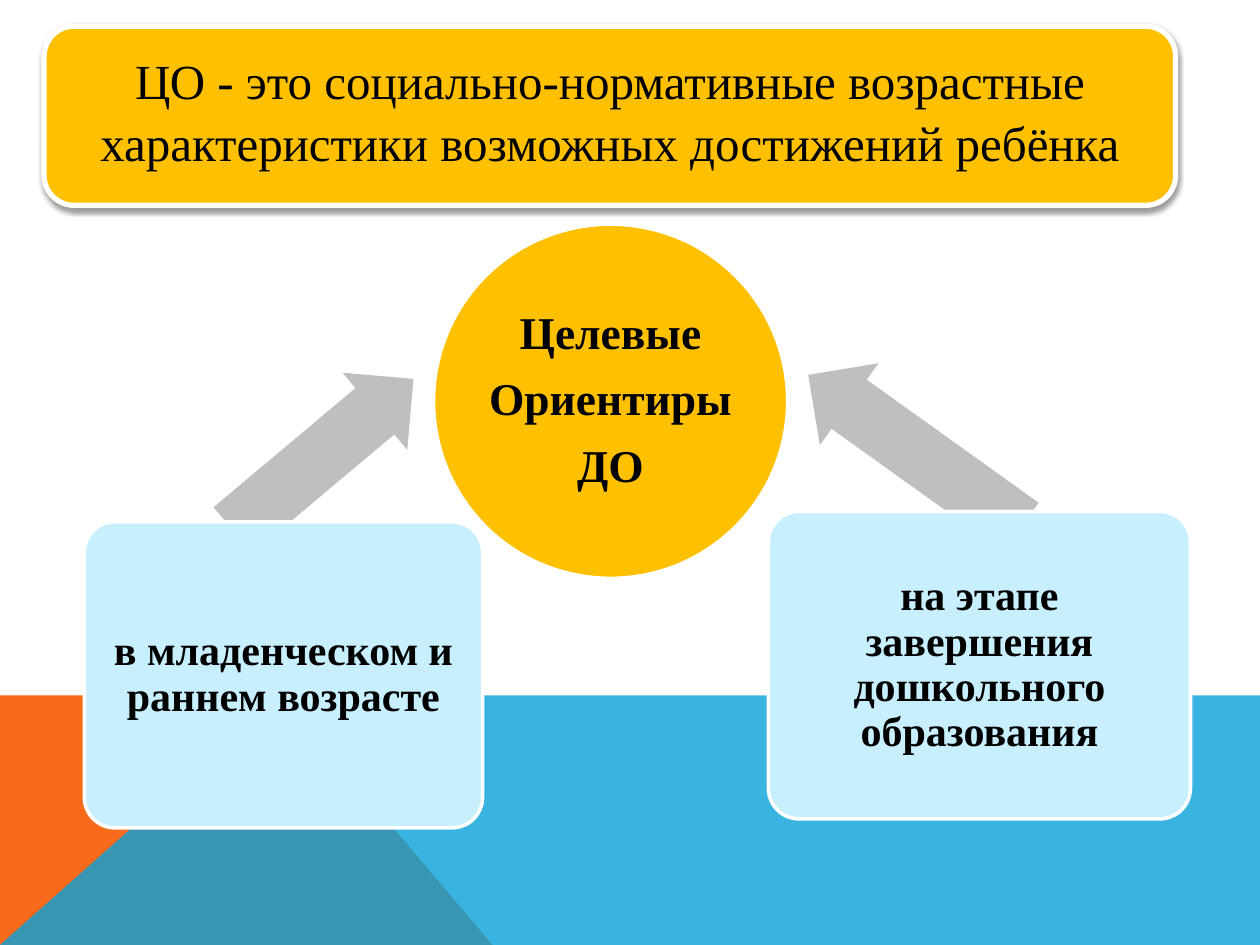
from lxml import etree
from pptx import Presentation
from pptx.dml.color import RGBColor
from pptx.enum.shapes import MSO_SHAPE
from pptx.enum.text import MSO_ANCHOR, PP_ALIGN
from pptx.oxml.ns import qn
from pptx.util import Cm, Pt

ELLIPSE = MSO_SHAPE.OVAL
ROUND_RECT = MSO_SHAPE.ROUNDED_RECTANGLE
LEFT_ARROW = MSO_SHAPE.LEFT_ARROW
MIDDLE = MSO_ANCHOR.MIDDLE
CENTER = PP_ALIGN.CENTER

COLORS = {
    "orange": "F96A1B", "blue": "08A1D9", "gold": "FFC000", "pale": "C8EFFD",
    "gray": "BEBFC0", "white": "FFFFFF", "black": "000000",
}
WIDTH, HEIGHT, HORIZON, PEAK = 25.4, 19.05, 14.02, 5.66


class SlideBuilder:
    """Draws styled elements on the current slide, with lengths in centimetres."""

    def __init__(self, slide, font="Times New Roman"):
        self.slide = slide
        self.font = font

    def color(self, name):
        return RGBColor.from_string(COLORS[name])

    def paint(self, sp, fill, line=0):
        sp.shadow.inherit = False
        sp.fill.solid()
        sp.fill.fore_color.rgb = self.color(fill)
        if line:
            sp.line.color.rgb = self.color("white")
            sp.line.width = Pt(line)
        else:
            sp.line.fill.background()

    def polygon(self, points, fill, alpha=100):
        pts = [(Cm(x), Cm(y)) for x, y in points]
        builder = self.slide.shapes.build_freeform(*pts[0])
        builder.add_line_segments(pts[1:], close=True)
        sp = builder.convert_to_shape()
        self.paint(sp, fill)
        if alpha < 100:
            clr = sp.fill._xPr.find(qn("a:solidFill"))[0]
            etree.SubElement(clr, qn("a:alpha"), val=str(alpha * 1000))

    def shape(self, kind, box, fill, line=0, adj=(), rotation=0):
        sp = self.slide.shapes.add_shape(kind, *map(Cm, box))
        self.paint(sp, fill, line)
        for i, value in enumerate(adj):
            sp.adjustments[i] = value
        sp.rotation = rotation
        return sp

    def text(self, sp, lines, size, bold=True, inset=0.13, bottom=None,
             spacing=0.9, gap=0):
        tf = sp.text_frame
        tf.word_wrap = True
        tf.vertical_anchor = MIDDLE
        tf.margin_left = tf.margin_right = tf.margin_top = Cm(inset)
        tf.margin_bottom = Cm(inset if bottom is None else bottom)
        for i, line in enumerate(lines):
            p = tf.add_paragraph() if i else tf.paragraphs[0]
            p.text = line
            p.alignment = CENTER
            p.line_spacing = spacing
            p.space_before = Pt(gap if i else 0)
            p.font.name = self.font
            p.font.size = Pt(size)
            p.font.bold = bold
            p.font.color.rgb = self.color("black")

    def shadow(self, sp, blur, dist, alpha):
        effects = sp._element.spPr.find(qn("a:effectLst"))
        outer = etree.SubElement(
            effects, qn("a:outerShdw"), blurRad=str(Pt(blur)),
            dist=str(Pt(dist)), dir="5400000", rotWithShape="0")
        clr = etree.SubElement(outer, qn("a:srgbClr"), val=COLORS["black"])
        etree.SubElement(clr, qn("a:alpha"), val=str(alpha * 1000))


def main():
    prs = Presentation()
    prs.slide_width, prs.slide_height = Cm(WIDTH), Cm(HEIGHT)
    s = SlideBuilder(prs.slides.add_slide(prs.slide_layouts[6]))

    s.polygon([(0, HEIGHT), (0, HORIZON), (PEAK, HORIZON), (9.93, HEIGHT)], "orange")
    s.polygon([(0, HEIGHT), (PEAK, HORIZON), (WIDTH, HORIZON), (WIDTH, HEIGHT)],
              "blue", alpha=80)

    circle = s.shape(ELLIPSE, (8.74, 4.52, 7.14, 7.14), "gold", line=2)
    s.text(circle, ["Целевые", "Ориентиры", "ДО"], 26, inset=0.05, gap=10)

    stages = [
        ((4.14, 8.15, 4.75, 2.03), 140, (1.7, 10.52, 8.03, 6.17),
         "в младенческом и раннем возрасте"),
        ((15.8, 8.08, 5.28, 2.03), 35.6, (15.49, 10.31, 8.51, 6.2),
         "на этапе завершения дошкольного образования"),
    ]
    for arrow, rotation, box, label in stages:
        s.shape(LEFT_ARROW, arrow, "gray", adj=(0.6, 0.5), rotation=rotation)
        card = s.shape(ROUND_RECT, box, "pale", line=2, adj=(0.1,))
        s.text(card, [label], 24)

    title = s.shape(ROUND_RECT, (0.89, 0.53, 22.81, 3.61), "gold", line=3)
    s.shadow(title, blur=3.1, dist=1.6, alpha=38)
    s.text(title, ["ЦО - это социально-нормативные возрастные "
                   "характеристики возможных достижений ребёнка"],
           28, bold=False, inset=0.25, bottom=0.5, spacing=1.05)

    prs.save("out.pptx")


if __name__ == "__main__":
    main()
